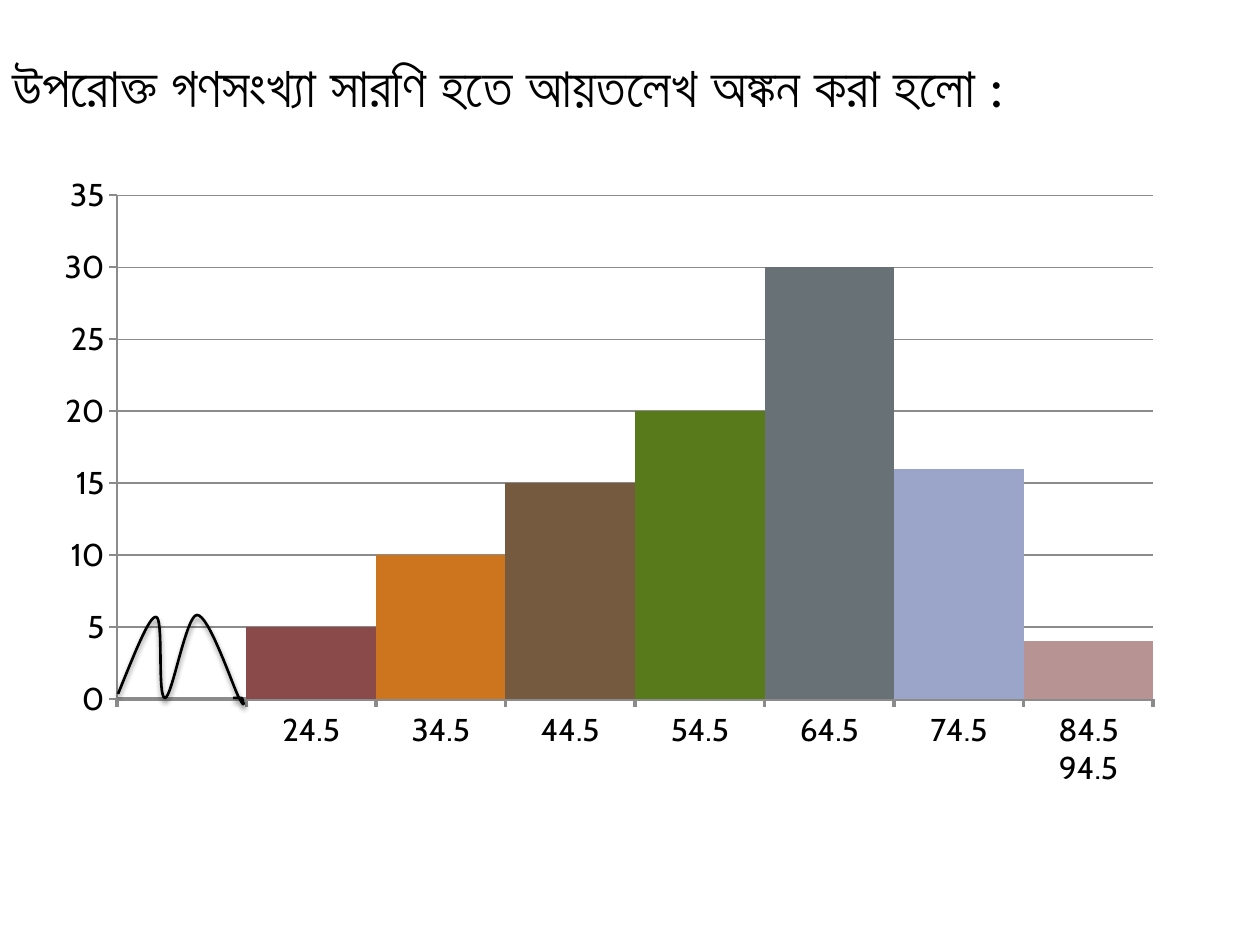
from lxml import etree
from pptx import Presentation
from pptx.chart.data import CategoryChartData
from pptx.dml.color import RGBColor
from pptx.enum.chart import XL_CHART_TYPE, XL_TICK_MARK
from pptx.oxml import parse_xml
from pptx.oxml.ns import nsdecls, qn
from pptx.util import Pt

EMU_PER_PX = 914400 / 126
COLORS = {
    "text": "000000",
    "axis": "8B8B8B",
    "bars": ["6076B4", "8A4A4A", "CC741E", "755A40", "587A1B", "687176", "9BA5C9", "B89393"],
}
TITLE = "উপরোক্ত গণসংখ্যা সারণি হতে আয়তলেখ অঙ্কন করা হলো :"
CATEGORIES = ["", "24.5", "34.5", "44.5", "54.5", "64.5", "74.5", "84.5\n94.5"]
FREQUENCIES = [None, 5, 10, 15, 20, 30, 16, 4]
PLOT_LAYOUT = {"x": 0.066, "y": 0.049, "w": 0.914, "h": 0.79}
BREAK_START = (118, 694)
BREAK_CURVES = [
    [(134, 655), (149, 616), (156, 617)],
    [(164, 617), (157, 698), (165, 698)],
    [(172, 698), (186, 615), (197, 615)],
    [(209, 615), (232, 684), (239, 698)],
    [(247, 712), (242, 698), (242, 698)],
]
BREAK_END = (233, 698)
CURVE_STEPS = 16


def px(value):
    return round(value * EMU_PER_PX)


def color(value):
    return RGBColor.from_string(value)


def set_font(font, size, name):
    for key, value in {"size": Pt(size), "name": name, "bold": False}.items():
        setattr(font, key, value)
    font.color.rgb = color(COLORS["text"])


def set_line(line, value, width):
    line.color.rgb = color(value)
    line.width = Pt(width)


def add_title(slide):
    shape = slide.shapes.add_textbox(0, px(45), px(1260), px(81))
    shape.text_frame.word_wrap = True
    run = shape.text_frame.paragraphs[0].add_run()
    run.text = TITLE
    set_font(run.font, 32, "Calibri")


def set_plot_layout(chart):
    plot_area = chart.plots[0]._element.getparent()
    for layout in plot_area.findall(qn("c:layout")):
        plot_area.remove(layout)
    layout = parse_xml(
        f'<c:layout {nsdecls("c")}><c:manualLayout><c:layoutTarget val="inner"/>'
        '<c:xMode val="edge"/><c:yMode val="edge"/></c:manualLayout></c:layout>'
    )
    for key, value in PLOT_LAYOUT.items():
        etree.SubElement(layout[0], qn(f"c:{key}")).set("val", str(value))
    plot_area.insert(0, layout)


def add_histogram(slide):
    data = CategoryChartData()
    data.categories = CATEGORIES
    data.add_series("Series 1", FREQUENCIES)
    chart = slide.shapes.add_chart(
        XL_CHART_TYPE.COLUMN_CLUSTERED, px(42), px(164), px(1134), px(638), data
    ).chart
    chart.has_legend = False
    chart.has_title = False
    set_font(chart.font, 18, "Cabin")
    set_plot_layout(chart)

    plot = chart.plots[0]
    plot.gap_width = 0
    plot.vary_by_categories = False
    for index, bar_color in enumerate(COLORS["bars"]):
        fill = plot.series[0].points[index].format.fill
        fill.solid()
        fill.fore_color.rgb = color(bar_color)

    for axis, width in ((chart.category_axis, 2), (chart.value_axis, 1)):
        axis.major_tick_mark = XL_TICK_MARK.OUTSIDE
        axis.minor_tick_mark = XL_TICK_MARK.NONE
        set_line(axis.format.line, COLORS["axis"], width)
    value_axis = chart.value_axis
    for key, value in {
        "minimum_scale": 0, "maximum_scale": 35, "major_unit": 5, "has_major_gridlines": True,
    }.items():
        setattr(value_axis, key, value)
    set_line(value_axis.major_gridlines.format.line, COLORS["axis"], 0.75)


def curve_points(start, curves):
    points = []
    for first, second, end in curves:
        for step in range(1, CURVE_STEPS + 1):
            t = step / CURVE_STEPS
            weights = ((1 - t) ** 3, 3 * t * (1 - t) ** 2, 3 * t**2 * (1 - t), t**3)
            controls = (start, first, second, end)
            points.append(tuple(
                px(sum(weight * point[axis] for weight, point in zip(weights, controls)))
                for axis in (0, 1)
            ))
        start = end
    return points


def add_shadow(shape):
    shape.shadow.inherit = False
    effects = shape._element.spPr.find(qn("a:effectLst"))
    effects.append(parse_xml(
        f'<a:outerShdw {nsdecls("a")} blurRad="{Pt(3)}" dist="{Pt(2.4)}" dir="5400000" '
        f'rotWithShape="0"><a:srgbClr val="{COLORS["text"]}"><a:alpha val="45000"/>'
        "</a:srgbClr></a:outerShdw>"
    ))


def add_axis_break(slide):
    builder = slide.shapes.build_freeform(*map(px, BREAK_START))
    points = curve_points(BREAK_START, BREAK_CURVES) + [tuple(map(px, BREAK_END))]
    builder.add_line_segments(points, close=False)
    shape = builder.convert_to_shape()
    shape.fill.background()
    set_line(shape.line, COLORS["text"], 1.5)
    add_shadow(shape)


def main():
    presentation = Presentation()
    presentation.slide_width = px(1260)
    presentation.slide_height = px(945)
    slide = presentation.slides.add_slide(presentation.slide_layouts[6])
    add_title(slide)
    add_histogram(slide)
    add_axis_break(slide)
    presentation.save("out.pptx")


if __name__ == "__main__":
    main()
